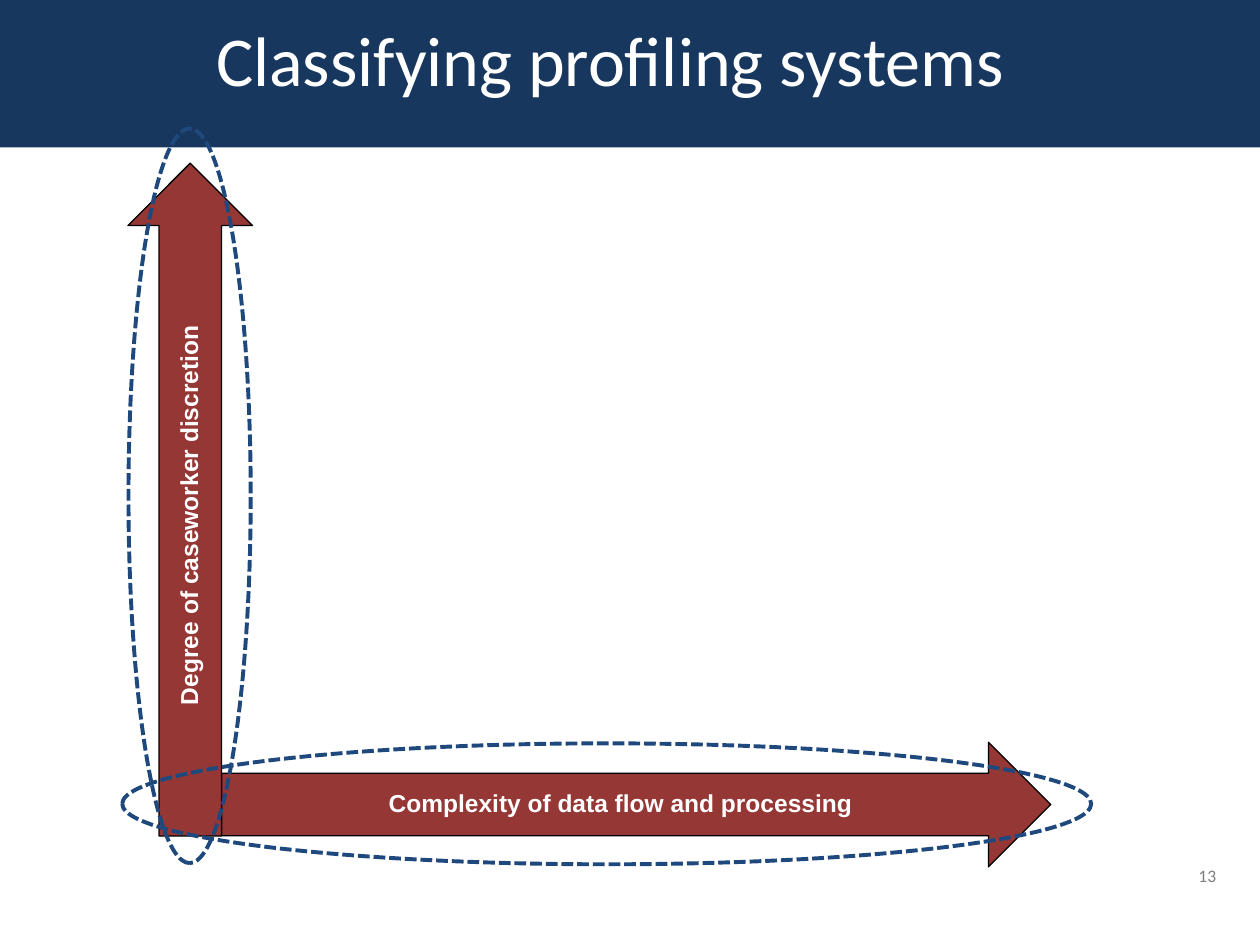
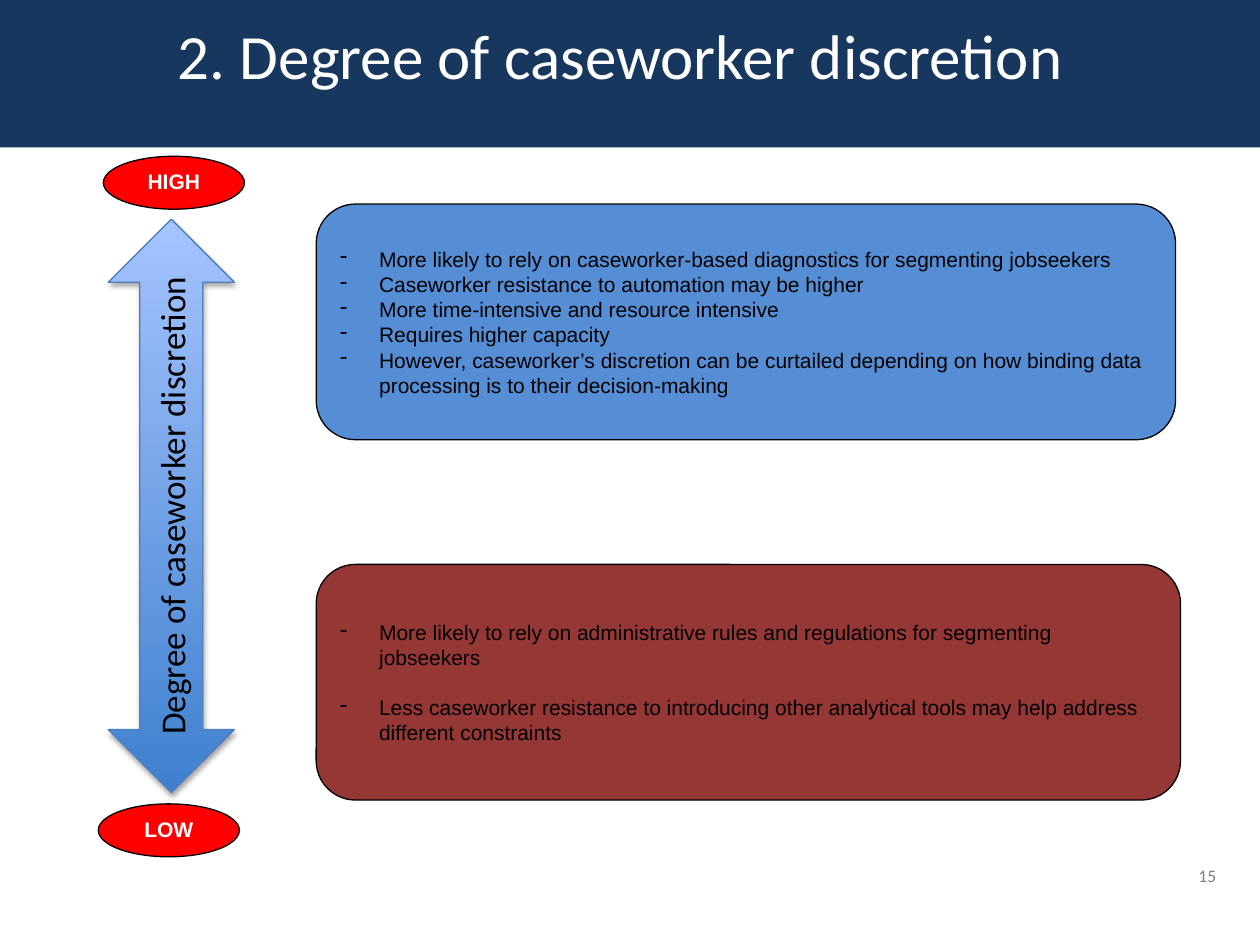
from dataclasses import dataclass

from lxml.etree import SubElement
from pptx import Presentation
from pptx.dml.color import RGBColor
from pptx.enum.dml import MSO_LINE
from pptx.enum.shapes import MSO_SHAPE
from pptx.enum.text import MSO_ANCHOR, MSO_AUTO_SIZE, PP_ALIGN
from pptx.oxml.ns import qn
from pptx.shapes.autoshape import Shape
from pptx.slide import Slide
from pptx.util import Emu, Inches, Pt

NAVY, RED, BRICK, BLUE = "17375E", "FF0000", "953735", "558ED5"
WHITE, BLACK, GREY, RING = "FFFFFF", "000000", "7F7F7F", "1F497D"
HEAD, BODY = "Calibri", "Arial"


@dataclass
class Box:
    left: float
    top: float
    width: float
    height: float

    def place(self) -> list[Emu]:
        return [Inches(v) for v in (self.left, self.top, self.width, self.height)]


@dataclass
class Label:
    """A filled shape with one bold white line of text."""
    kind: MSO_SHAPE
    box: Box
    fill: str
    text: str
    size: int
    turn: int = 0
    inset: float = 0.0


@dataclass
class Panel:
    box: Box
    fill: str
    points: list[str]
    gap: float


def rgb(code: str) -> RGBColor:
    return RGBColor.from_string(code)


def style(para, size: float, face: str, color: str,
          align=PP_ALIGN.CENTER, bold: bool = False) -> None:
    para.alignment = align
    for run in para.runs:
        font = run.font
        font.size, font.name, font.bold = Pt(size), face, bold
        font.color.rgb = rgb(color)


def draw(slide: Slide, kind: MSO_SHAPE, box: Box, fill: str | None,
         line: str | None = BLACK, weight: float = 0.75) -> Shape:
    shape = slide.shapes.add_shape(kind, *box.place())
    shape.shadow.inherit = False
    if fill:
        shape.fill.solid()
        shape.fill.fore_color.rgb = rgb(fill)
    else:
        shape.fill.background()
    if line:
        shape.line.color.rgb = rgb(line)
        shape.line.width = Pt(weight)
    else:
        shape.line.fill.background()
    return shape


def add_band(slide: Slide) -> None:
    """Put the title band on the layout, behind its placeholders."""
    band = draw(slide, MSO_SHAPE.RECTANGLE, Box(0, 0, 10, 1.17), NAVY, None)
    node = band.element
    node.nvSpPr.cNvPr.set("id", "20")
    slide.slide_layout.shapes.element.insert(2, node)


def add_page(deck, title: str, size: int, width: float, page: int) -> Slide:
    slide = deck.slides.add_slide(deck.slide_layouts[5])
    head = slide.shapes.title
    head.left, head.top, head.width, head.height = Box(0.42, 0.08, width, 1).place()
    frame = head.text_frame
    frame.text = title
    frame.vertical_anchor = MSO_ANCHOR.TOP
    frame.auto_size = MSO_AUTO_SIZE.NONE
    style(frame.paragraphs[0], size, HEAD, WHITE)
    # Page number
    foot = slide.shapes.add_textbox(*Box(9, 6.75, 0.75, 0.4).place()).text_frame
    foot.word_wrap = True
    foot.vertical_anchor = MSO_ANCHOR.MIDDLE
    foot.text = str(page)
    style(foot.paragraphs[0], 10, HEAD, GREY, PP_ALIGN.RIGHT)
    return slide


def add_label(slide: Slide, item: Label) -> None:
    shape = draw(slide, item.kind, item.box, item.fill)
    shape.rotation = item.turn
    frame = shape.text_frame
    frame.margin_left = frame.margin_right = Inches(item.inset)
    frame.margin_top = frame.margin_bottom = Inches(item.inset / 2)
    frame.text = item.text
    para = frame.paragraphs[0]
    para.line_spacing = 0.9
    style(para, item.size, BODY, WHITE, bold=True)


def add_ring(slide: Slide, box: Box, turn: int = 0) -> None:
    ring = draw(slide, MSO_SHAPE.OVAL, box, None, RING, 2.25)
    ring.line.dash_style = MSO_LINE.SQUARE_DOT
    ring.rotation = turn


def add_panel(slide: Slide, item: Panel) -> None:
    frame = draw(slide, MSO_SHAPE.ROUNDED_RECTANGLE, item.box, item.fill).text_frame
    frame.text = "\n".join(item.points)
    for i, para in enumerate(frame.paragraphs):
        props = para._p.get_or_add_pPr()
        props.set("marL", str(Inches(0.31)))
        props.set("indent", str(-Inches(0.31)))
        SubElement(props, qn("a:buChar"), char="-")
        if i and item.gap:
            para.space_before = Pt(item.gap)
        style(para, 12, BODY, BLACK, PP_ALIGN.LEFT)


def add_scale(slide: Slide, box: Box, text: str) -> None:
    """Draw the shaded two-way arrow with upward text."""
    arrow = draw(slide, MSO_SHAPE.UP_DOWN_ARROW, box, BLUE, "4B7EBC")
    arrow.fill.gradient()
    arrow.fill.gradient_angle = 90
    for stop, code in zip(arrow.fill.gradient_stops, ("3F80CE", "A4C4FF")):
        stop.color.rgb = rgb(code)
    # Soft shadow below
    glow = SubElement(arrow.element.spPr.find(qn("a:effectLst")), qn("a:outerShdw"),
                      blurRad=str(Pt(3.1)), dist=str(Pt(1.8)), dir="5400000", rotWithShape="0")
    tone = SubElement(glow, qn("a:srgbClr"), val=BLACK)
    SubElement(tone, qn("a:alpha"), val="35000")
    frame = arrow.text_frame
    frame.text = text
    frame._txBody.bodyPr.set("vert", "vert270")
    style(frame.paragraphs[0], 20, HEAD, BLACK)


def main() -> None:
    deck = Presentation()
    deck.slide_width, deck.slide_height = Inches(10), Inches(7.5)

    # Two axes, each ringed
    axes = add_page(deck, "Classifying profiling systems ", 40, 8.97, 13)
    add_band(axes)
    for item in (
        Label(MSO_SHAPE.RIGHT_ARROW, Box(-1.16, 3.47, 5.34, 0.99), BRICK,
              "Degree of caseworker discretion", 14, 270, 0.1),
        Label(MSO_SHAPE.RIGHT_ARROW, Box(1.76, 5.89, 6.58, 0.99), BRICK,
              "Complexity of data flow and processing", 14, 0, 0.1),
    ):
        add_label(axes, item)
    add_ring(axes, Box(-1.41, 3.45, 5.83, 0.97), 270)
    add_ring(axes, Box(0.97, 5.9, 7.69, 0.96))

    # Scale from low to high
    scale = add_page(deck, "2. Degree of caseworker discretion ", 36, 9.12, 15)
    add_scale(scale, Box(0.86, 1.74, 1, 4.55), "Degree of caseworker discretion")
    for text, left, top in (("LOW", 0.78, 6.38), ("HIGH", 0.82, 1.24)):
        add_label(scale, Label(MSO_SHAPE.OVAL, Box(left, top, 1.12, 0.42), RED, text, 12))

    # What each end means
    for item in (
        Panel(Box(2.51, 4.48, 6.86, 1.87), BRICK, [
            "More likely to rely on administrative rules and regulations for "
            "segmenting jobseekers",
            "Less caseworker resistance to introducing other analytical tools "
            "may help address different constraints",
        ], 14),
        Panel(Box(2.51, 1.62, 6.82, 1.87), BLUE, [
            "More likely to rely on caseworker-based diagnostics for segmenting jobseekers",
            "Caseworker resistance to automation may be higher",
            "More time-intensive and resource intensive",
            "Requires higher capacity",
            "However, caseworker’s discretion can be curtailed depending on how "
            "binding data processing is to their decision-making",
        ], 0),
    ):
        add_panel(scale, item)

    deck.save("out.pptx")


if __name__ == "__main__":
    main()
